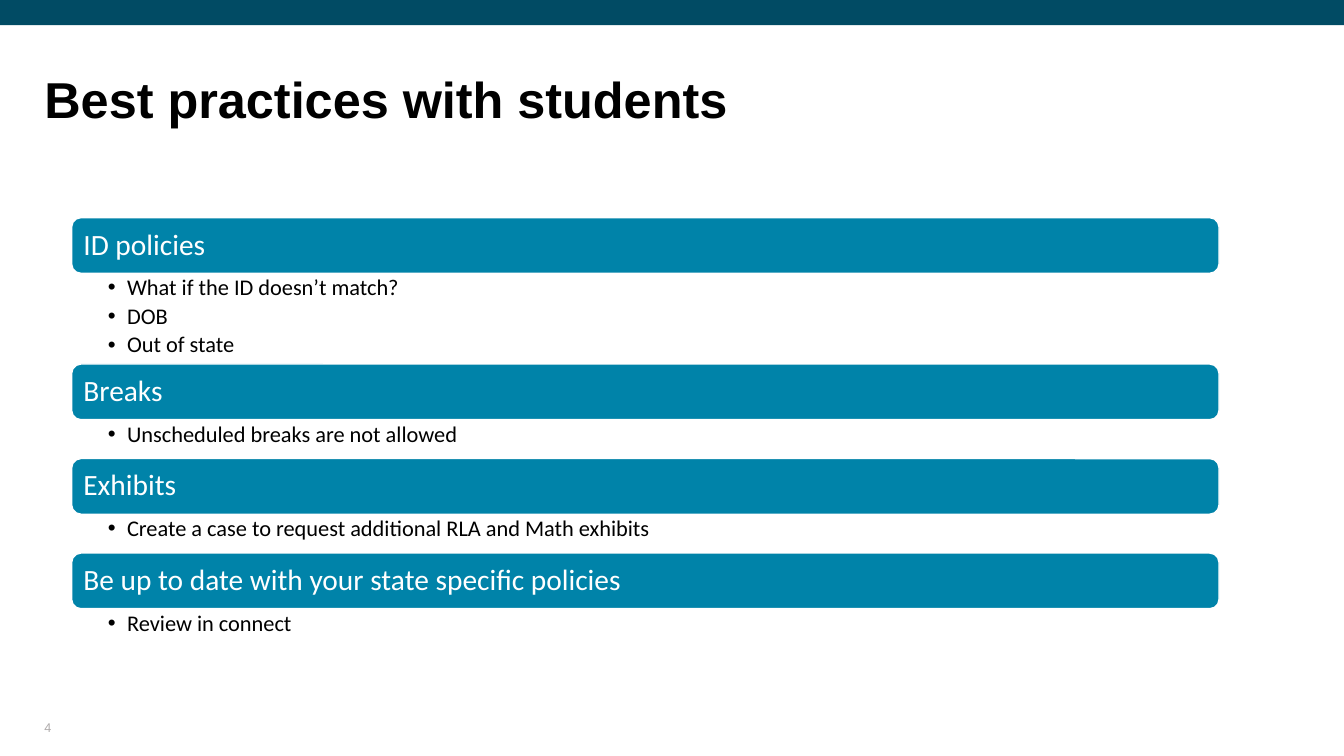
from dataclasses import dataclass
from typing import Any

from lxml.etree import SubElement
from pptx import Presentation
from pptx.dml.color import RGBColor
from pptx.enum.shapes import MSO_SHAPE as Shape
from pptx.enum.text import MSO_ANCHOR as Anchor
from pptx.oxml.ns import qn
from pptx.util import Inches, Pt

NAVY = RGBColor(0x01, 0x4B, 0x64)
TEAL = RGBColor(0x00, 0x83, 0xA9)
WHITE = RGBColor(0xFF, 0xFF, 0xFF)
BLACK = RGBColor(0x00, 0x00, 0x00)
GRAY = RGBColor(0xAF, 0xAB, 0xAB)

WIDE, HIGH = Inches(13.33), Inches(7.5)

# Shares of the slide's size, in percent
LEFT, SPAN, TOP = 5.33, 85.37, 28.8
BAR = 7.36
PAD_X, PAD_Y = 0.2, 0.36
MARGIN = 3.3


@dataclass
class Box:
    """A place on the slide, in percent of its width and height."""
    x: float
    y: float
    w: float
    h: float

    def place(self) -> tuple[int, ...]:
        return tuple(round(share * full / 100) for share, full in
                     zip((self.x, self.y, self.w, self.h), (WIDE, HIGH) * 2))


@dataclass
class Style:
    font: dict[str, Any]
    color: RGBColor
    para: dict[str, Any]
    anchor: Anchor
    inset: tuple[float, float, float, float] = (0, 0, 0, 0)
    bullet: bool = False


@dataclass
class Topic:
    head: str
    notes: list[str]
    room: float = 5.14


TITLE = Style({"name": "Arial", "size": Pt(36), "bold": True}, BLACK,
              {"line_spacing": 0.9}, Anchor.BOTTOM, (0, 0, 0, 0.59))
NUMBER = Style({"name": "Arial", "size": Pt(9)}, GRAY,
               {"space_after": Pt(6)}, Anchor.BOTTOM)
HEAD = Style({"name": "Calibri", "size": Pt(21)}, WHITE,
             {"line_spacing": 0.9, "space_after": Pt(7.35)},
             Anchor.MIDDLE, (0.09, 0.09, 0.09, 0.09))
NOTE = Style({"name": "Calibri", "size": Pt(16)}, BLACK,
             {"level": 1, "line_spacing": 0.9, "space_after": Pt(3.2)},
             Anchor.TOP, (0.36, 0.03, 0.16, 0.03), True)

TOPICS = [
    Topic("ID policies",
          ["What if the ID doesn’t match?", "DOB", "Out of state"], 12),
    Topic("Breaks", ["Unscheduled breaks are not allowed"]),
    Topic("Exhibits",
          ["Create a case to request additional RLA and Math exhibits"]),
    Topic("Be up to date with your state specific policies",
          ["Review in connect"]),
]


def assign(target: Any, values: dict[str, Any]) -> None:
    for name, value in values.items():
        setattr(target, name, value)


def add_dot(para: Any) -> None:
    """Give a paragraph a round bullet with a hanging indent."""
    props = para._p.get_or_add_pPr()
    props.set("marL", str(Inches(0.19)))
    props.set("indent", str(-Inches(0.19)))
    SubElement(props, qn("a:buFont"), typeface="Arial")
    SubElement(props, qn("a:buChar"), char="•")


def add_text(shapes: Any, box: Box, lines: list[str], style: Style) -> None:
    frame = shapes.add_textbox(*box.place()).text_frame
    sides = ("margin_left", "margin_top", "margin_right", "margin_bottom")
    assign(frame, dict(zip(sides, map(Inches, style.inset))))
    assign(frame, {"word_wrap": True, "vertical_anchor": style.anchor})
    for i, line in enumerate(lines):
        para = frame.add_paragraph() if i else frame.paragraphs[0]
        if style.bullet:
            add_dot(para)
        assign(para, style.para)
        run = para.add_run()
        run.text = line
        assign(run.font, style.font)
        run.font.color.rgb = style.color


def add_block(shapes: Any, kind: Shape, box: Box, fill: RGBColor) -> Any:
    block = shapes.add_shape(kind, *box.place())
    block.shadow.inherit = False
    block.fill.solid()
    block.fill.fore_color.rgb = fill
    block.line.fill.background()
    return block


def add_topic(shapes: Any, topic: Topic, top: float) -> None:
    box = Box(LEFT, top, SPAN, BAR)
    bar = add_block(shapes, Shape.ROUNDED_RECTANGLE, box, TEAL)
    bar.line.color.rgb = WHITE
    bar.line.width = Pt(1)
    inner = Box(LEFT + PAD_X, top + PAD_Y, SPAN - 2 * PAD_X, BAR - 2 * PAD_Y)
    add_text(shapes, inner, [topic.head], HEAD)
    add_text(shapes, Box(LEFT, top + BAR, SPAN, topic.room), topic.notes, NOTE)


def main() -> None:
    deck = Presentation()
    assign(deck, {"slide_width": WIDE, "slide_height": HIGH})
    slide = deck.slides.add_slide(deck.slide_layouts[6])
    shapes = slide.shapes
    add_block(shapes, Shape.RECTANGLE, Box(0, 0, 100, 3.33), NAVY)
    add_text(shapes, Box(MARGIN, 94, 22.5, 3.2), ["4"], NUMBER)
    add_text(shapes, Box(MARGIN, 6.67, 51.46, 18),
             ["Best practices with students"], TITLE)
    group = shapes.add_group_shape()
    top = TOP
    for topic in TOPICS:
        add_topic(group.shapes, topic, top)
        top += BAR + topic.room
    deck.save("out.pptx")


if __name__ == "__main__":
    main()
